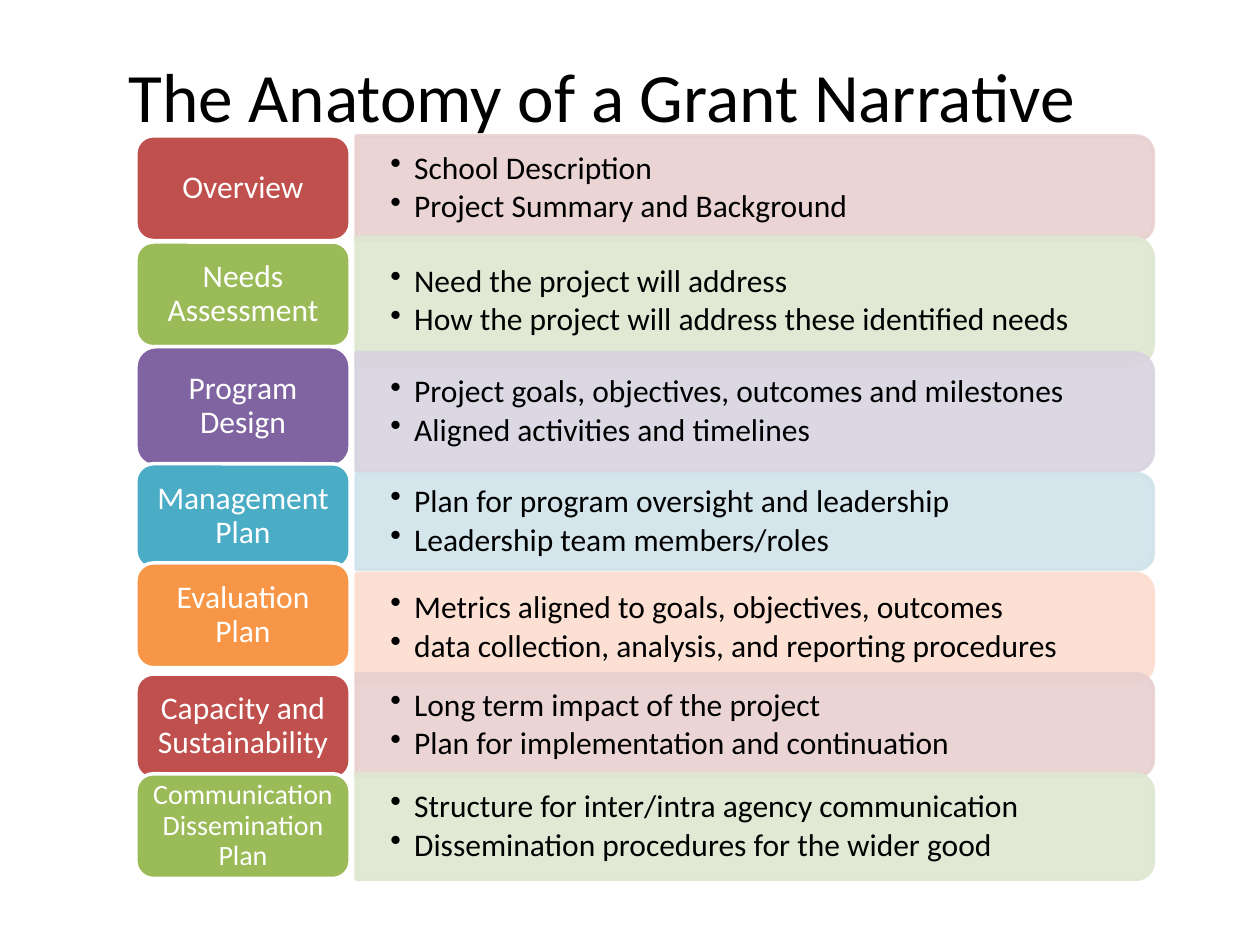
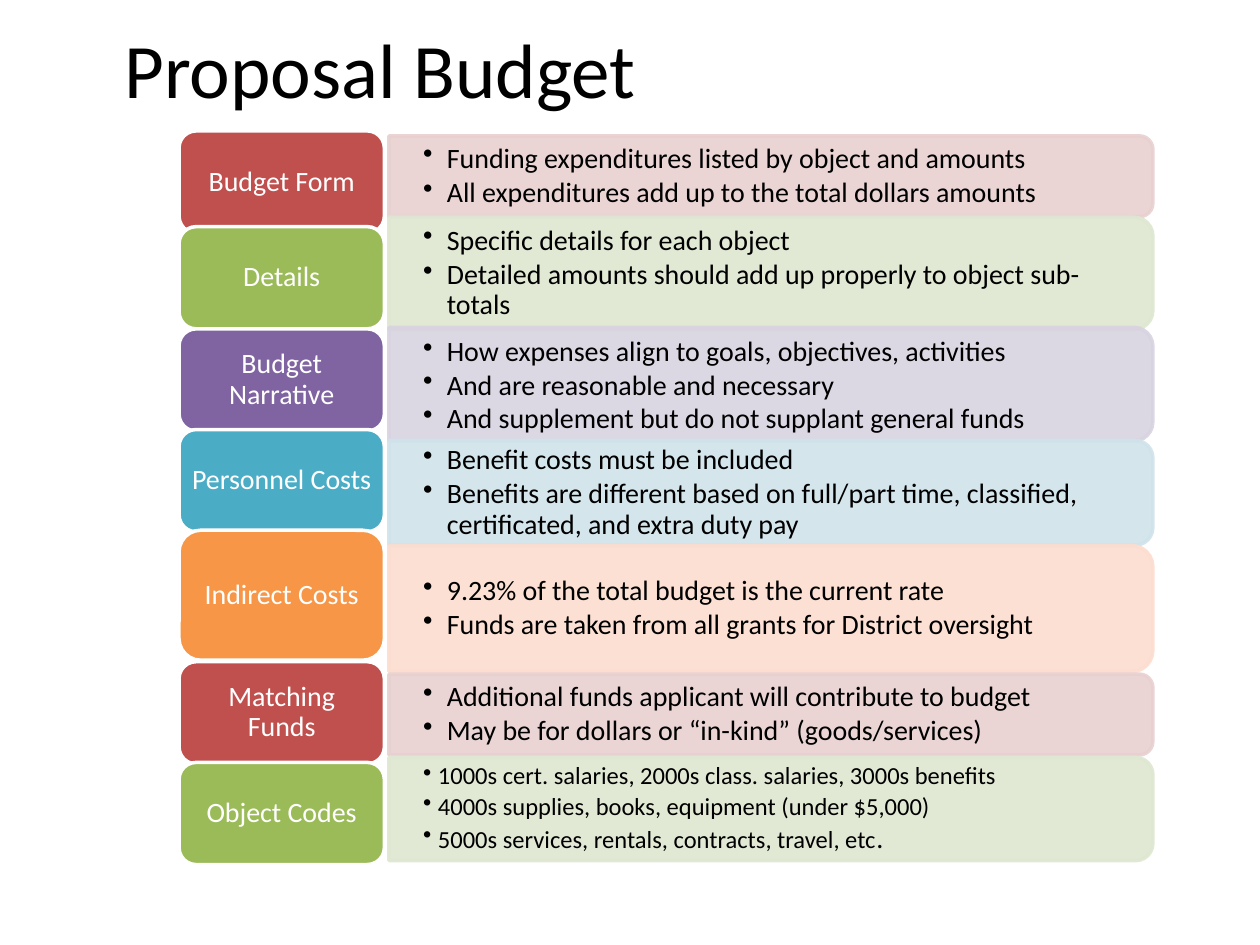
from dataclasses import dataclass
from itertools import cycle

from lxml.etree import SubElement
from pptx import Presentation
from pptx.dml.color import RGBColor
from pptx.enum.shapes import MSO_SHAPE
from pptx.enum.text import MSO_ANCHOR, PP_ALIGN
from pptx.oxml.ns import qn
from pptx.util import Cm, Pt

FONT = "Calibri"
BLACK = "000000"
WHITE = "FFFFFF"
ROW_COLOURS = [
    ("C0504D", "E8D0D0"),
    ("9BBB59", "DEE7D1"),
    ("8064A2", "D8D3E0"),
    ("4BACC6", "D0E3EA"),
    ("F79646", "FCDDCF"),
]


@dataclass
class Columns:
    """Horizontal places of the labels and panels on a slide, in cm."""
    label_left: float
    label_width: float
    panel_left: float
    panel_width: float


@dataclass
class Row:
    """A label with its bullets; spans are top and height in cm."""
    label: str
    bullets: list
    label_span: tuple
    panel_span: tuple
    label_size: float = 16
    bullet_size: float = 16
    indent: float = 0.48
    tight: bool = True


ANATOMY_COLUMNS = Columns(2.74, 4.32, 7.18, 16.07)
ANATOMY_ROWS = [
    Row("Overview",
        ["School Description", "Project Summary and Background"],
        (2.74, 2.11), (2.74, 2.11), 18, 18),
    Row("Needs Assessment",
        ["Need the project will address",
         "How the project will address these identified needs"],
        (4.88, 2.11), (4.78, 2.59), 18, 18),
    Row("Program Design",
        ["Project goals, objectives, outcomes and milestones",
         "Aligned activities and timelines"],
        (6.99, 2.41), (7.11, 2.39), 18, 18),
    Row("Management Plan",
        ["Plan for program oversight and leadership",
         "Leadership team members/roles"],
        (9.35, 2.11), (9.55, 1.93), 18, 18),
    Row("Evaluation Plan",
        ["Metrics aligned to goals, objectives, outcomes",
         "data collection, analysis, and reporting procedures"],
        (11.35, 2.11), (11.56, 2.18), 18, 18),
    Row("Capacity and Sustainability",
        ["Long term impact of the project",
         "Plan for implementation and continuation"],
        (13.59, 2.11), (13.58, 2.08), 18, 18),
    Row("Communication Dissemination Plan",
        ["Structure for inter/intra agency communication",
         "Dissemination procedures for the wider good"],
        (15.6, 2.11), (15.6, 2.13), 16, 18),
]

BUDGET_COLUMNS = Columns(3.61, 4.14, 7.84, 15.4)
BUDGET_ROWS = [
    Row("Budget Form",
        ["Funding expenditures listed by object and amounts",
         "All expenditures add up to the total dollars amounts"],
        (2.64, 2.06), (2.74, 1.63)),
    Row("Details",
        ["Specific details for each object",
         "Detailed amounts should add up properly to object sub-totals"],
        (4.57, 2.06), (4.38, 2.26)),
    Row("Budget Narrative",
        ["How expenses align to goals, objectives, activities",
         "And are reasonable and necessary",
         "And supplement but do not supplant general funds"],
        (6.63, 2.06), (6.6, 2.29), tight=False),
    Row("Personnel Costs",
        ["Benefit costs must be included",
         "Benefits are different based on full/part time, classified, "
         "certificated, and extra duty pay"],
        (8.66, 2.06), (8.88, 2.11)),
    Row("Indirect Costs",
        ["9.23% of the total budget is the current rate",
         "Funds are taken from all grants for District oversight"],
        (10.69, 2.62), (11, 2.54)),
    Row("Matching Funds",
        ["Additional funds applicant will contribute to budget",
         "May be for dollars or “in-kind” (goods/services)"],
        (13.34, 2.06), (13.59, 1.63)),
    Row("Object Codes",
        ["1000s cert. salaries, 2000s class. salaries, 3000s benefits",
         "4000s supplies, books, equipment (under $5,000)",
         [("5000s services, rentals, contracts, travel, etc", 14), (".", 16)]],
        (15.37, 2.06), (15.27, 2.08), bullet_size=14, indent=0.3),
]


def colour(hex_string):
    """Turn a hex string into a colour."""
    return RGBColor.from_string(hex_string)


def add_run(paragraph, text, size, hex_string):
    """Add one run of text to a paragraph."""
    run = paragraph.add_run()
    run.text = text
    run.font.name = FONT
    run.font.size = Pt(size)
    run.font.color.rgb = colour(hex_string)


def set_frame(shape, horizontal, vertical):
    """Wrap and centre the text vertically, with insets in cm."""
    frame = shape.text_frame
    frame.word_wrap = True
    frame.vertical_anchor = MSO_ANCHOR.MIDDLE
    frame.margin_left = frame.margin_right = Cm(horizontal)
    frame.margin_top = frame.margin_bottom = Cm(vertical)
    return frame


def add_box(slide, kind, left, top, width, height, fill, line):
    """Add a filled shape with a 2 pt outline and no shadow."""
    shape = slide.shapes.add_shape(kind, Cm(left), Cm(top), Cm(width), Cm(height))
    shape.shadow.inherit = False
    shape.fill.solid()
    shape.fill.fore_color.rgb = colour(fill)
    shape.line.color.rgb = colour(line)
    shape.line.width = Pt(2)
    return shape


def add_title(slide, text, top, left, height, size):
    """Add the slide title."""
    title = slide.shapes.add_textbox(Cm(left), Cm(top), Cm(22.43), Cm(height))
    frame = set_frame(title, 0.25, 0.13)
    add_run(frame.paragraphs[0], text, size, BLACK)


def add_panel(slide, left, top, width, height, fill):
    """Add a pale panel that is rounded on its right side."""
    panel = add_box(slide, MSO_SHAPE.ROUND_2_SAME_RECTANGLE,
                    left + (width - height) / 2, top + (height - width) / 2,
                    height, width, fill, fill)
    panel.rotation = 90
    for element in panel.element.spPr.iter(qn("a:srgbClr")):
        SubElement(element, qn("a:alpha"), val="90000")


def add_bullets(slide, columns, row):
    """Add the bulleted text that lies on a panel."""
    top, height = row.panel_span
    box = slide.shapes.add_textbox(Cm(columns.panel_left), Cm(top),
                                   Cm(columns.panel_width - 0.1), Cm(height))
    frame = set_frame(box, 0.69, 0.36)
    for index, bullet in enumerate(row.bullets):
        paragraph = frame.add_paragraph() if index else frame.paragraphs[0]
        properties = paragraph._p.get_or_add_pPr()
        properties.set("marL", str(Cm(row.indent)))
        properties.set("indent", str(-Cm(row.indent)))
        SubElement(properties, qn("a:buChar"), char="•")
        paragraph.level = 1
        if row.tight:
            paragraph.line_spacing = 0.9
            paragraph.space_after = Pt(row.bullet_size * 0.15)
        runs = [(bullet, row.bullet_size)] if isinstance(bullet, str) else bullet
        for text, size in runs:
            add_run(paragraph, text, size, BLACK)


def add_label(slide, columns, row, fill):
    """Add the coloured label at the left of a row."""
    top, height = row.label_span
    label = add_box(slide, MSO_SHAPE.ROUNDED_RECTANGLE, columns.label_left, top,
                    columns.label_width, height, fill, WHITE)
    paragraph = set_frame(label, 0.15, 0.1).paragraphs[0]
    paragraph.alignment = PP_ALIGN.CENTER
    paragraph.line_spacing = 0.9
    add_run(paragraph, row.label, row.label_size, WHITE)


def add_rows(slide, columns, rows):
    """Add every row, cycling through the row colours."""
    for row, (strong, pale) in zip(rows, cycle(ROW_COLOURS)):
        top, height = row.panel_span
        add_panel(slide, columns.panel_left, top, columns.panel_width, height, pale)
        add_bullets(slide, columns, row)
        add_label(slide, columns, row, strong)


def main():
    """Build and save both slides."""
    presentation = Presentation()
    presentation.slide_width = Cm(25.4)
    presentation.slide_height = Cm(19.05)
    blank = presentation.slide_layouts[6]

    anatomy = presentation.slides.add_slide(blank)
    add_title(anatomy, "The Anatomy of a Grant Narrative",
              top=1.07, left=2.34, height=1.7, size=39.6)
    add_rows(anatomy, ANATOMY_COLUMNS, ANATOMY_ROWS)

    budget = presentation.slides.add_slide(blank)
    add_title(budget, "Proposal Budget", top=0.2, left=2.26, height=2.34, size=44)
    add_rows(budget, BUDGET_COLUMNS, BUDGET_ROWS)

    presentation.save("out.pptx")


if __name__ == "__main__":
    main()
